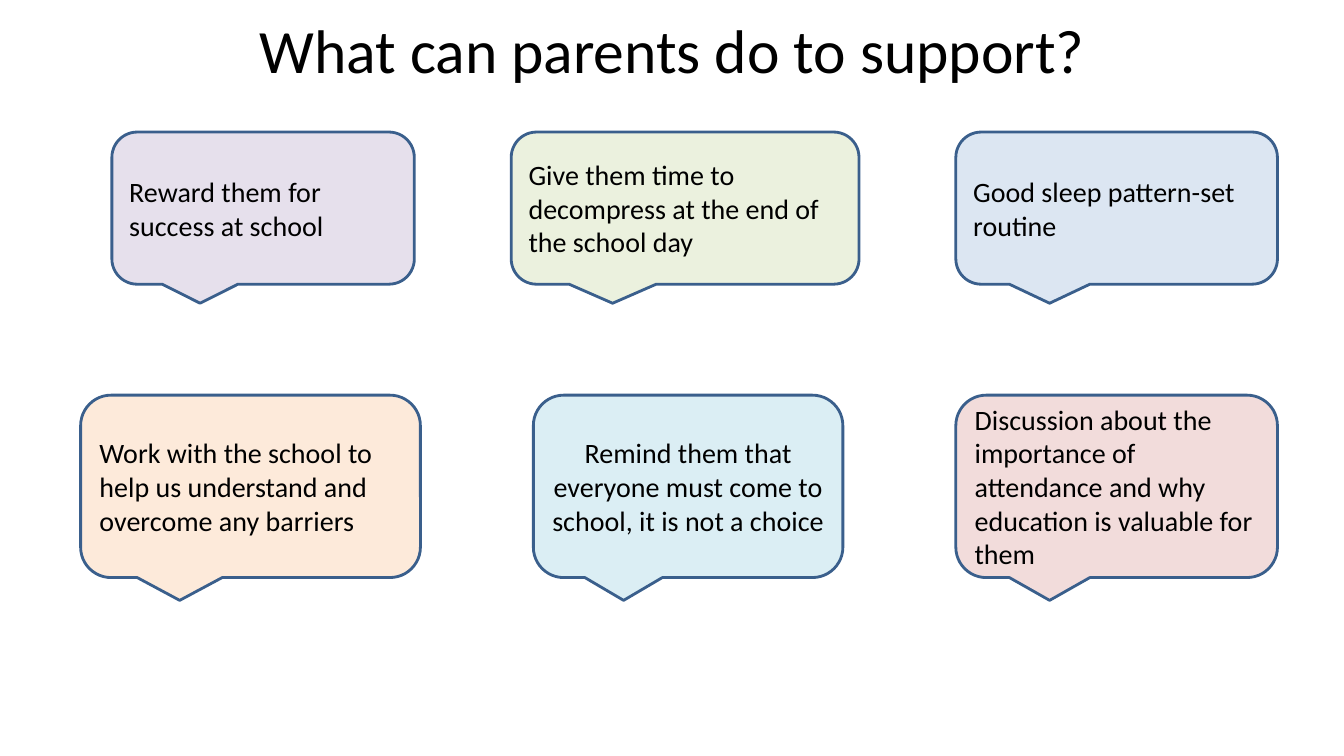
from pptx import Presentation
from pptx.dml.color import RGBColor
from pptx.enum import shapes, text
from pptx.util import Inches, Pt


def color(value):
    return RGBColor.from_string(value)


def write(shape, words, size, alignment):
    frame = shape.text_frame
    frame.word_wrap = True
    frame.vertical_anchor = text.MSO_ANCHOR.MIDDLE
    paragraph = frame.paragraphs[0]
    paragraph.alignment = alignment
    run = paragraph.add_run()
    run.text = words
    run.font.name = "Calibri"
    run.font.size = Pt(size)
    run.font.color.rgb = color("000000")


LEFT = text.PP_ALIGN.LEFT
CENTER = text.PP_ALIGN.CENTER

presentation = Presentation()
presentation.slide_width = Inches(13.33)
presentation.slide_height = Inches(7.5)
slide = presentation.slides.add_slide(presentation.slide_layouts[5])

title = slide.shapes.title
title.left, title.top = Inches(0.67), Inches(-0.14)
title.width, title.height = Inches(12), Inches(1.25)
write(title, "What can parents do to support?", 44, CENTER)

rows = [
    (1.31, 1.51, [
        (1.11, 3, "E6E0EC", LEFT, "Reward them for success at school"),
        (5.07, 3.45, "EBF1DE", LEFT, "Give them time to decompress at the end of the school day"),
        (9.48, 3.19, "DCE6F2", LEFT, "Good sleep pattern-set routine"),
    ]),
    (3.92, 1.81, [
        (0.8, 3.37, "FDEADA", LEFT,
         "Work with the school to help us understand and overcome any barriers"),
        (5.29, 3.07, "DBEEF4", CENTER,
         "Remind them that everyone must come to school, it is not a choice"),
        (9.48, 3.19, "F2DCDB", LEFT,
         "Discussion about the importance of attendance and why education is valuable for them"),
    ]),
]

for top, height, callouts in rows:
    for left, width, fill, alignment, words in callouts:
        callout = slide.shapes.add_shape(
            shapes.MSO_SHAPE.ROUNDED_RECTANGULAR_CALLOUT,
            Inches(left), Inches(top), Inches(width), Inches(height))
        callout.shadow.inherit = False
        callout.fill.solid()
        callout.fill.fore_color.rgb = color(fill)
        callout.line.color.rgb = color("3A5F8C")
        callout.line.width = Pt(2)
        write(callout, words, 20, alignment)

presentation.save("out.pptx")
